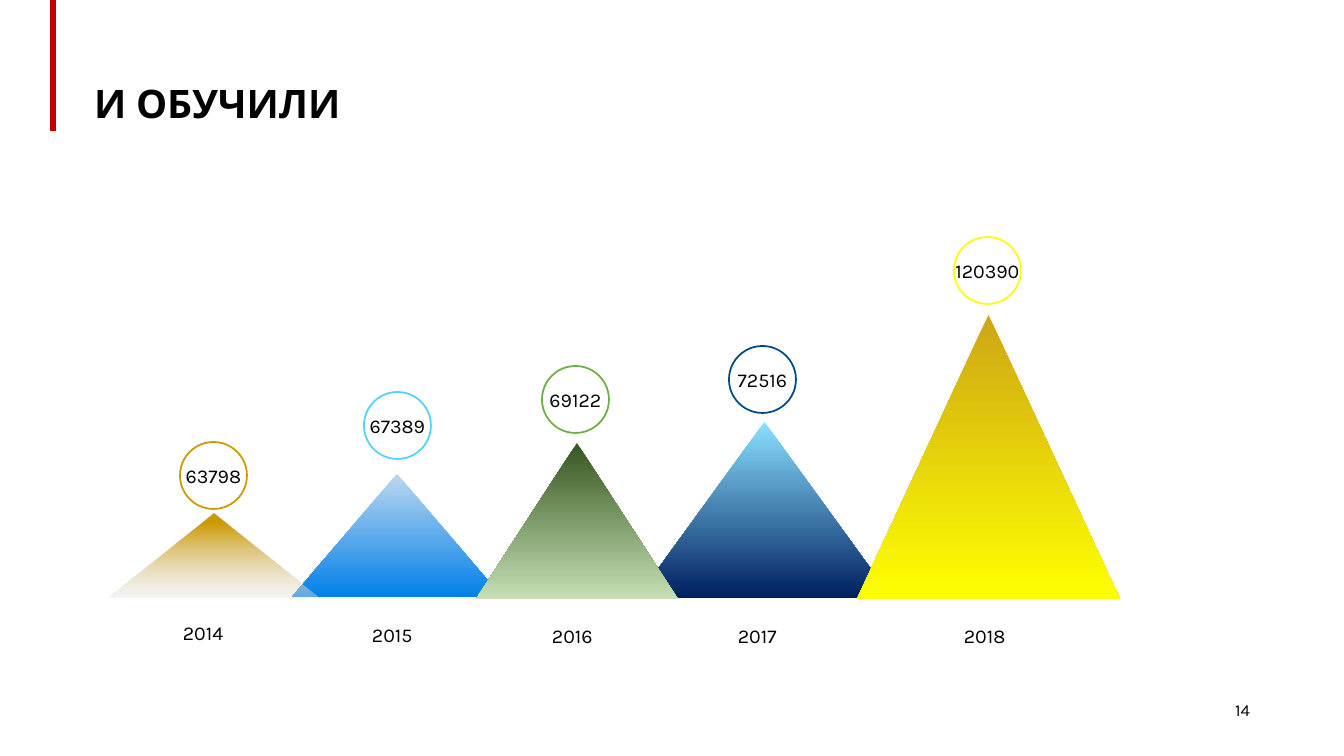
from lxml.etree import SubElement
from pptx import Presentation
from pptx.dml.color import RGBColor
from pptx.enum.shapes import MSO_SHAPE
from pptx.enum.text import MSO_ANCHOR, MSO_AUTO_SIZE, PP_ALIGN
from pptx.oxml.ns import qn
from pptx.util import Emu, Pt


def box(*lengths):
    return [Emu(round(length * 914400 / 100.8)) for length in lengths]


def write(frame, text, size, align, bold=False):
    paragraph = frame.paragraphs[0]
    paragraph.alignment = align
    run = paragraph.add_run()
    run.text = text
    run.font.name = "Karla"
    run.font.size = Pt(size)
    run.font.bold = bold
    run.font.color.rgb = RGBColor.from_string("000000")
    return paragraph


prs = Presentation()
prs.slide_width, prs.slide_height = box(1344, 756)
slide = prs.slides.add_slide(prs.slide_layouts[5])
shapes = slide.shapes

heading = shapes.title
heading.left, heading.top, heading.width, heading.height = box(74, 85, 1159, 47)
heading_frame = heading.text_frame
heading_frame.auto_size = MSO_AUTO_SIZE.NONE
heading_frame.word_wrap = True
heading_frame.vertical_anchor = MSO_ANCHOR.BOTTOM
heading_frame.margin_left = box(20)[0]
write(heading_frame, "И ОБУЧИЛИ", 28, PP_ALIGN.LEFT, True).line_spacing = 0.9

accent = shapes.add_shape(MSO_SHAPE.RECTANGLE, *box(50, 0, 6, 131))
accent.shadow.inherit = False
accent.fill.solid()
accent.fill.fore_color.rgb = RGBColor.from_string("C00000")
accent.line.fill.background()

years = [
    ("2017", "72516", (637, 422, 255, 176), (729, 346), (728, 619),
     "014987", [(0, "89E0FF"), (1, "002060")]),
    ("2018", "120390", (857, 315, 263, 284), (954, 237), (954, 619),
     "FFFF00", [(0, "CDA615"), (1, "FFFF00")]),
    ("2015", "67389", (292, 474, 210, 123), (364, 392), (362, 618),
     "53D2FF", [(0, "BDD7EE"), (1, "0180E9")]),
    ("2016", "69122", (476, 443, 202, 156), (542, 366), (542, 619),
     "70AD47", [(0.01, "385723"), (1, "C5E0B4")]),
    ("2014", "63798", (109, 514, 210, 83), (180, 442), (173, 616),
     "CC9900", [(0.1, "CC9900"), (1, "E7E6E6")]),
]

for year, trained, peak_box, badge_at, year_at, badge_color, gradient in years:
    peak = shapes.add_shape(MSO_SHAPE.ISOSCELES_TRIANGLE, *box(*peak_box))
    peak.shadow.inherit = False
    peak.line.fill.background()
    peak.fill.gradient()
    peak.fill.gradient_angle = 270
    for stop, (position, color) in zip(peak.fill.gradient_stops, gradient):
        stop.position = position
        stop.color.rgb = RGBColor.from_string(color)
    if year == "2014":
        base_color = list(peak.element.iter(qn("a:srgbClr")))[-1]
        SubElement(base_color, qn("a:alpha"), val="40000")

    badge = shapes.add_shape(MSO_SHAPE.OVAL, *box(*badge_at, 67, 67))
    badge.shadow.inherit = False
    badge.fill.background()
    badge.line.color.rgb = RGBColor.from_string(badge_color)
    badge.line.width = Pt(1.25)
    badge.text_frame.word_wrap = False
    badge.text_frame.vertical_anchor = MSO_ANCHOR.MIDDLE
    write(badge.text_frame, trained, 14, PP_ALIGN.CENTER)

    year_label = shapes.add_textbox(*box(*year_at, 62, 34))
    year_label.text_frame.word_wrap = False
    year_label.text_frame.auto_size = MSO_AUTO_SIZE.SHAPE_TO_FIT_TEXT
    write(year_label.text_frame, year, 14, PP_ALIGN.LEFT)

page_number = shapes.add_textbox(*box(1145, 695, 115, 30))
page_number.text_frame.word_wrap = True
write(page_number.text_frame, "14", 12, PP_ALIGN.RIGHT)

prs.save("out.pptx")
